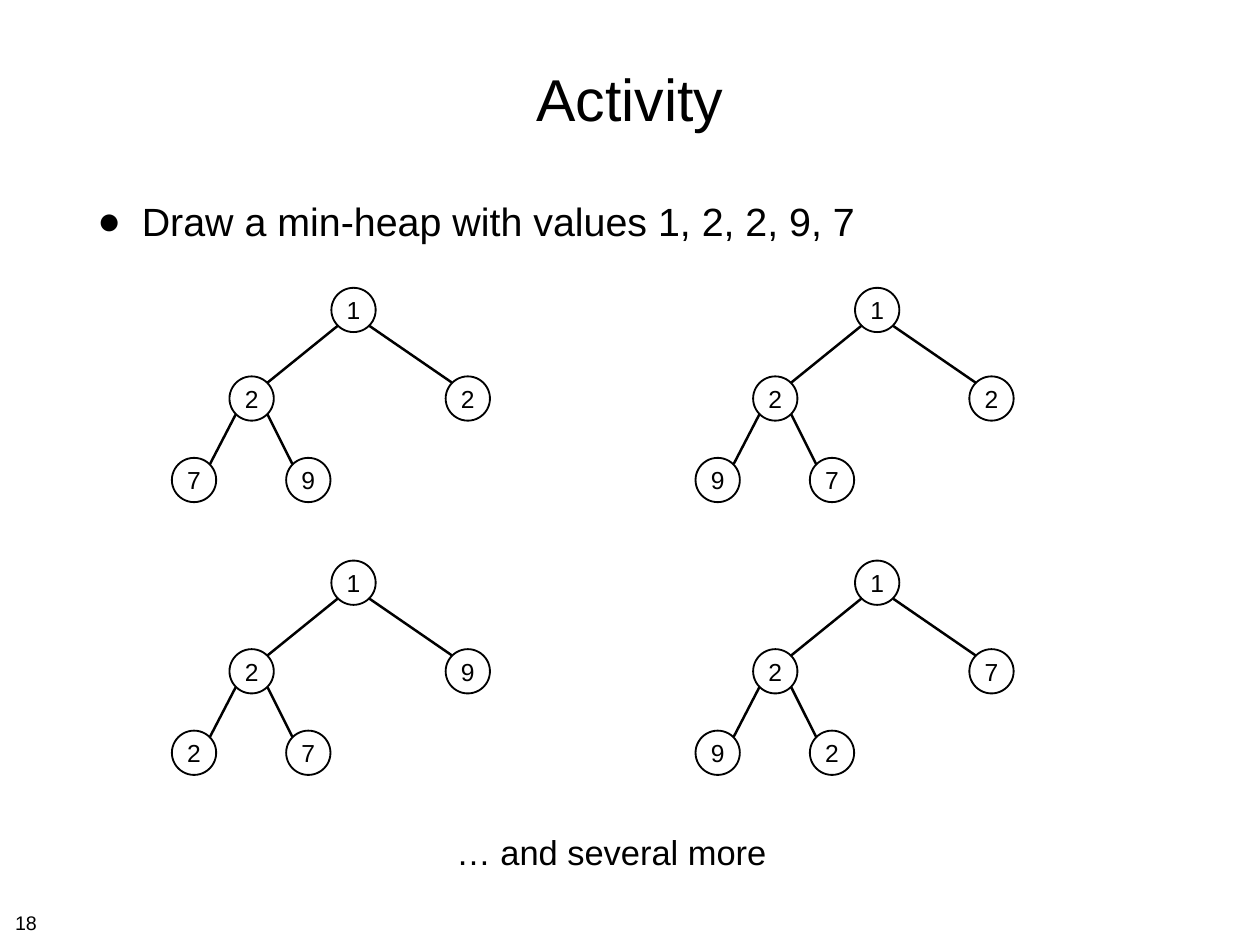
from lxml.etree import SubElement
from pptx import Presentation
from pptx.dml.color import RGBColor
from pptx.enum.shapes import MSO_CONNECTOR as Connector, MSO_SHAPE as Shape
from pptx.enum.text import MSO_ANCHOR as Anchor, MSO_AUTO_SIZE as AutoSize, PP_ALIGN as Align
from pptx.oxml.ns import qn
from pptx.util import Pt

TITLE = "Activity"
TASK = "Draw a min-heap with values 1, 2, 2, 9, 7"
REMARK = "… and several more"
PAGE_NUMBER = "18"
HEAPS = [
    ["1", "2", "2", "7", "9"],
    ["1", "2", "2", "9", "7"],
    ["1", "2", "9", "2", "7"],
    ["1", "2", "7", "9", "2"],
]

COLORS = {"ink": "000000", "paper": "FFFFFF"}
FONT = "Arial"
PX = 9144
HEAP_LEFT, HEAP_TOP = 194, 325
COLUMN_STEP, ROW_STEP = 591, 308
NODE_SIZE = 50
NODE_OFFSETS = [(180, 0), (65, 100), (309, 100), (0, 192), (129, 192)]
EDGE_INSET = 18


def px(*lengths):
    return [length * PX for length in lengths]


def color(name):
    return RGBColor.from_string(COLORS[name])


def write(shape, text, size, align=Align.CENTER, anchor=Anchor.MIDDLE,
          insets=(6, 6), wrap=True, space_before=0):
    frame = shape.text_frame
    frame.auto_size = AutoSize.NONE
    frame.word_wrap = wrap
    frame.vertical_anchor = anchor
    frame.margin_left = frame.margin_right = insets[0] * PX
    frame.margin_top = frame.margin_bottom = insets[1] * PX
    paragraph = frame.paragraphs[0]
    paragraph.alignment = align
    paragraph.space_before = Pt(space_before)
    run = paragraph.add_run()
    run.text = text
    run.font.size = Pt(size)
    run.font.name = FONT
    run.font.color.rgb = color("ink")
    return paragraph


def place(shape, *box):
    shape.left, shape.top, shape.width, shape.height = px(*box)
    return shape


def add_bullet(paragraph, indent):
    properties = paragraph._p.get_or_add_pPr()
    properties.set("marL", str(indent * PX))
    properties.set("indent", str(-indent * PX))
    bullet_color = SubElement(properties, qn("a:buClr"))
    SubElement(bullet_color, qn("a:srgbClr"), val=COLORS["ink"])
    SubElement(properties, qn("a:buFont"), typeface=FONT)
    SubElement(properties, qn("a:buChar"), char="●")


def add_edge(heap, parent, child):
    side = 1 if child[0] > parent[0] else -1
    edge = heap.shapes.add_connector(Connector.STRAIGHT, *px(
        parent[0] + side * EDGE_INSET, parent[1] + EDGE_INSET,
        child[0] - side * EDGE_INSET, child[1] - EDGE_INSET))
    edge.line.color.rgb = color("ink")
    edge.line.width = Pt(2)
    SubElement(edge._element.spPr, qn("a:effectLst"))


def add_node(heap, value, center):
    radius = NODE_SIZE // 2
    node = heap.shapes.add_shape(Shape.OVAL, *px(
        center[0] - radius, center[1] - radius, NODE_SIZE, NODE_SIZE))
    node.shadow.inherit = False
    node.fill.background()
    node.line.color.rgb = color("ink")
    node.line.width = Pt(1.5)
    write(node, value, 20)


def add_heap(slide, values, left, top):
    heap = slide.shapes.add_group_shape()
    radius = NODE_SIZE // 2
    centers = [(left + x + radius, top + y + radius) for x, y in NODE_OFFSETS]
    for index in range(1, len(values)):
        add_edge(heap, centers[(index - 1) // 2], centers[index])
    for value, center in zip(values, centers):
        add_node(heap, value, center)


def main():
    deck = Presentation()
    deck.slide_width, deck.slide_height = px(1422, 1067)
    slide = deck.slides.add_slide(deck.slide_layouts[1])
    slide.background.fill.solid()
    slide.background.fill.fore_color.rgb = color("paper")

    write(place(slide.shapes.title, 104, 28, 1214, 164), TITLE, 48)
    task = place(slide.placeholders[1], 104, 217, 1214, 754)
    add_bullet(write(task, TASK, 32, align=Align.LEFT, anchor=Anchor.TOP,
                     space_before=8), 50)

    for index, values in enumerate(HEAPS):
        row, column = divmod(index, 2)
        add_heap(slide, values, HEAP_LEFT + column * COLUMN_STEP,
                 HEAP_TOP + row * ROW_STEP)

    remark = slide.shapes.add_textbox(*px(503, 933, 374, 57))
    write(remark, REMARK, 28, anchor=Anchor.TOP, insets=(10, 5), wrap=False)
    page_number = slide.shapes.add_textbox(*px(11, 1023, 37, 35))
    write(page_number, PAGE_NUMBER, 16, align=Align.LEFT, anchor=Anchor.TOP,
          wrap=False)
    deck.save("out.pptx")


if __name__ == "__main__":
    main()
